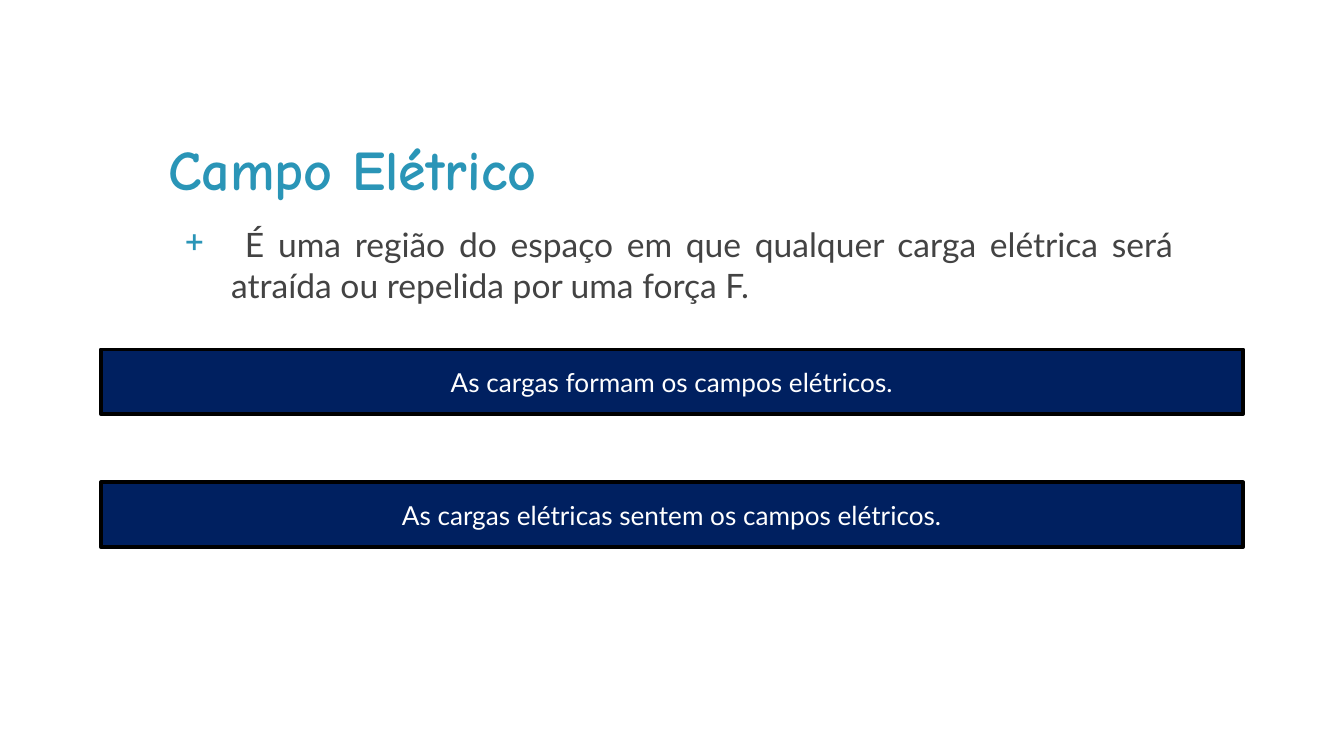
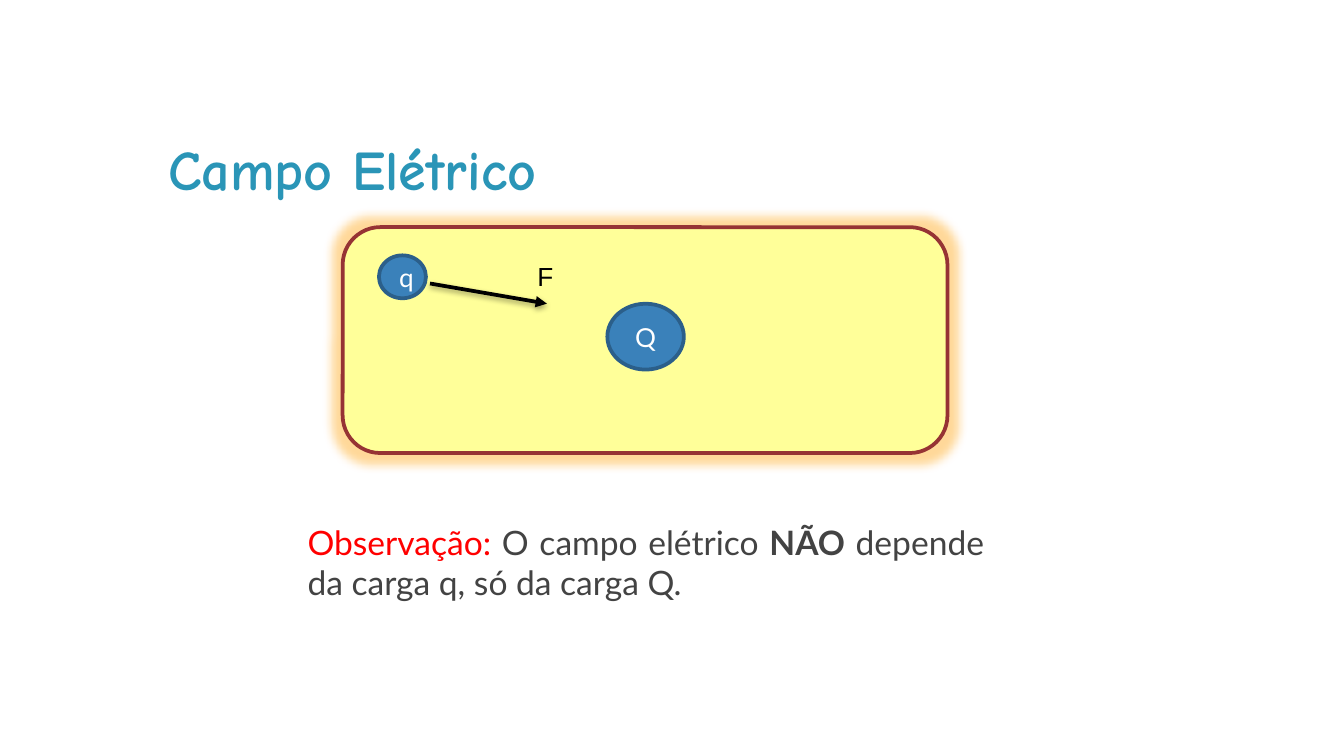
from dataclasses import dataclass

from lxml import etree
from pptx import Presentation
from pptx.dml.color import RGBColor
from pptx.enum.shapes import MSO_CONNECTOR, MSO_SHAPE
from pptx.enum.text import MSO_ANCHOR, MSO_AUTO_SIZE, PP_ALIGN
from pptx.oxml.ns import qn
from pptx.util import Pt

LINE = MSO_CONNECTOR.STRAIGHT
RECT = MSO_SHAPE.RECTANGLE
ROUNDED = MSO_SHAPE.ROUNDED_RECTANGLE
CHARGE = MSO_SHAPE.FLOWCHART_CONNECTOR
TOP, MIDDLE = MSO_ANCHOR.TOP, MSO_ANCHOR.MIDDLE
NO_FIT, GROW = MSO_AUTO_SIZE.NONE, MSO_AUTO_SIZE.SHAPE_TO_FIT_TEXT
LEFT, CENTER, JUSTIFY = PP_ALIGN.LEFT, PP_ALIGN.CENTER, PP_ALIGN.JUSTIFY


@dataclass(frozen=True)
class Theme:
    accent: str = "2A95B7"
    ink: str = "434343"
    alert: str = "FF0000"
    black: str = "000000"
    white: str = "FFFFFF"
    navy: str = "002060"
    field: str = "FFFF99"
    field_edge: str = "963334"
    glow: str = "FF9F00"
    charge: str = "3A81BA"
    charge_edge: str = "2B5F8A"
    title_font: str = "Comic Neue"
    body_font: str = "Lato"
    label_font: str = "Arial"
    title_size: int = 30
    body_size: int = 18
    label_size: int = 14
    stroke: int = 2
    inset: float = 7.2


T = Theme()
TITLE_BOX = (82.8, 62.6, 553, 59)
DEFINITION_BOX = (82.8, 113, 553, 140.4)
STATEMENTS_BOX = (54, 187.2, 612, 105.8)
FIELD_BOX = (183.6, 121.7, 324, 121)
NOTE_BOX = (157.7, 272.2, 376.6, 56.2)


def add_run(p, text, color=T.ink, **formats):
    r = p.add_run()
    r.text = text
    values = {"name": T.body_font, "size": Pt(T.body_size), "bold": False, **formats}
    for name, value in values.items():
        setattr(r.font, name, value)
    r.font.color.rgb = RGBColor.from_string(color)


def set_frame(tf, **formats):
    values = {"word_wrap": True, "auto_size": NO_FIT, "vertical_anchor": TOP,
              **{f"margin_{side}": Pt(T.inset) for side in ("left", "top", "right", "bottom")},
              **formats}
    for name, value in values.items():
        setattr(tf, name, value)


def add_text(s, box, align=LEFT, **formats):
    """Add a text box and return its first paragraph."""
    tf = s.shapes.add_textbox(*map(Pt, box)).text_frame
    set_frame(tf, **formats)
    p = tf.paragraphs[0]
    p.alignment = align
    return p


def add_panel(s, kind, box, fill, edge, text=""):
    sp = s.shapes.add_shape(kind, *map(Pt, box))
    sp.shadow.inherit = False
    sp.fill.solid()
    sp.fill.fore_color.rgb = RGBColor.from_string(fill)
    sp.line.color.rgb = RGBColor.from_string(edge)
    sp.line.width = Pt(T.stroke)
    if text:
        p = sp.text_frame.paragraphs[0]
        sp.text_frame.vertical_anchor = MIDDLE
        p.alignment = CENTER
        add_run(p, text, T.white, size=Pt(T.label_size))
    return sp


def set_effect(sp, tag, color, alpha, **attributes):
    """Give a shape one effect, with alpha in percent."""
    sp_pr = sp._element.spPr
    effects = sp_pr.find(qn("a:effectLst"))
    if effects is None:
        effects = etree.SubElement(sp_pr, qn("a:effectLst"))
    effect = etree.SubElement(effects, qn(tag), {k: str(v) for k, v in attributes.items()})
    clr = etree.SubElement(effect, qn("a:srgbClr"), val=color)
    etree.SubElement(clr, qn("a:alpha"), val=str(alpha * 1000))


def set_bullet(p, char, color, margin, hang):
    p_pr = p._p.get_or_add_pPr()
    p_pr.set("marL", str(Pt(margin)))
    p_pr.set("indent", str(-Pt(hang)))
    bu_clr = etree.SubElement(p_pr, qn("a:buClr"))
    etree.SubElement(bu_clr, qn("a:srgbClr"), val=color)
    etree.SubElement(p_pr, qn("a:buChar"), char=char)


def add_titled_slide(prs, text):
    s = prs.slides.add_slide(prs.slide_layouts[5])
    title = s.shapes.title
    for name, value in zip(("left", "top", "width", "height"), TITLE_BOX):
        setattr(title, name, Pt(value))
    set_frame(title.text_frame, vertical_anchor=MIDDLE)
    p = title.text_frame.paragraphs[0]
    p.alignment = LEFT
    p.line_spacing = 0.9
    add_run(p, text, T.accent, name=T.title_font, size=Pt(T.title_size), bold=True)
    return s


def add_definition(s, box, text):
    p = add_text(s, box, JUSTIFY)
    set_bullet(p, "+", T.accent, margin=34, hang=25)
    add_run(p, text)


def add_statements(s, box, statements, height=34.6):
    """Spread full-width bars evenly over the height of the box."""
    left, top, width, total = box
    pitch = (total - height) / (len(statements) - 1)
    for i, text in enumerate(statements):
        add_panel(s, RECT, (left, top + i * pitch, width, height), T.navy, T.black, text)


def add_field(s, box):
    """Draw the field of charge Q and the force F on charge q."""
    left, top, width, height = box
    field = add_panel(s, ROUNDED, box, T.field, T.field_edge)
    set_effect(field, "a:glow", T.glow, 40, rad=Pt(10))

    for text, x, y, w, h in (("Q", 141.8, 41, 41, 35.3), ("q", 19.4, 15.1, 25.2, 23)):
        add_panel(s, CHARGE, (left + x, top + y, w, h), T.charge, T.charge_edge, text)

    force = s.shapes.add_connector(LINE, Pt(left + 46.8), Pt(top + 30.2),
                                   Pt(left + 109.4), Pt(top + 41))
    force.line.color.rgb = RGBColor.from_string(T.black)
    force.line.width = Pt(T.stroke)
    etree.SubElement(force.line._get_or_add_ln(), qn("a:tailEnd"), type="triangle")
    set_effect(force, "a:outerShdw", T.black, 38, blurRad=Pt(3.1), dist=Pt(1.6),
               dir=90 * 60000, rotWithShape=0)

    p = add_text(s, (left + 97.2, top + 14.4, 30.2, 24.5), auto_size=GROW,
                 margin_top=Pt(3.6), margin_bottom=Pt(3.6))
    add_run(p, "F", T.black, name=T.label_font, size=Pt(T.label_size))


def add_note(s, box):
    p = add_text(s, box, JUSTIFY)
    add_run(p, "Observação: ", T.alert)
    add_run(p, "O campo elétrico ")
    add_run(p, "NÃO", bold=True)
    add_run(p, " depende da carga q, só da carga Q.")


def main():
    prs = Presentation()
    prs.slide_width, prs.slide_height = Pt(720), Pt(405)

    s = add_titled_slide(prs, "Campo Elétrico")
    add_definition(s, DEFINITION_BOX, " É uma região do espaço em que qualquer carga "
                                      "elétrica será atraída ou repelida por uma força F.")
    add_statements(s, STATEMENTS_BOX, ("As cargas formam os campos elétricos.",
                                       "As cargas elétricas sentem os campos elétricos."))

    s = add_titled_slide(prs, "Campo Elétrico")
    add_field(s, FIELD_BOX)
    add_note(s, NOTE_BOX)

    prs.save("out.pptx")


if __name__ == "__main__":
    main()
